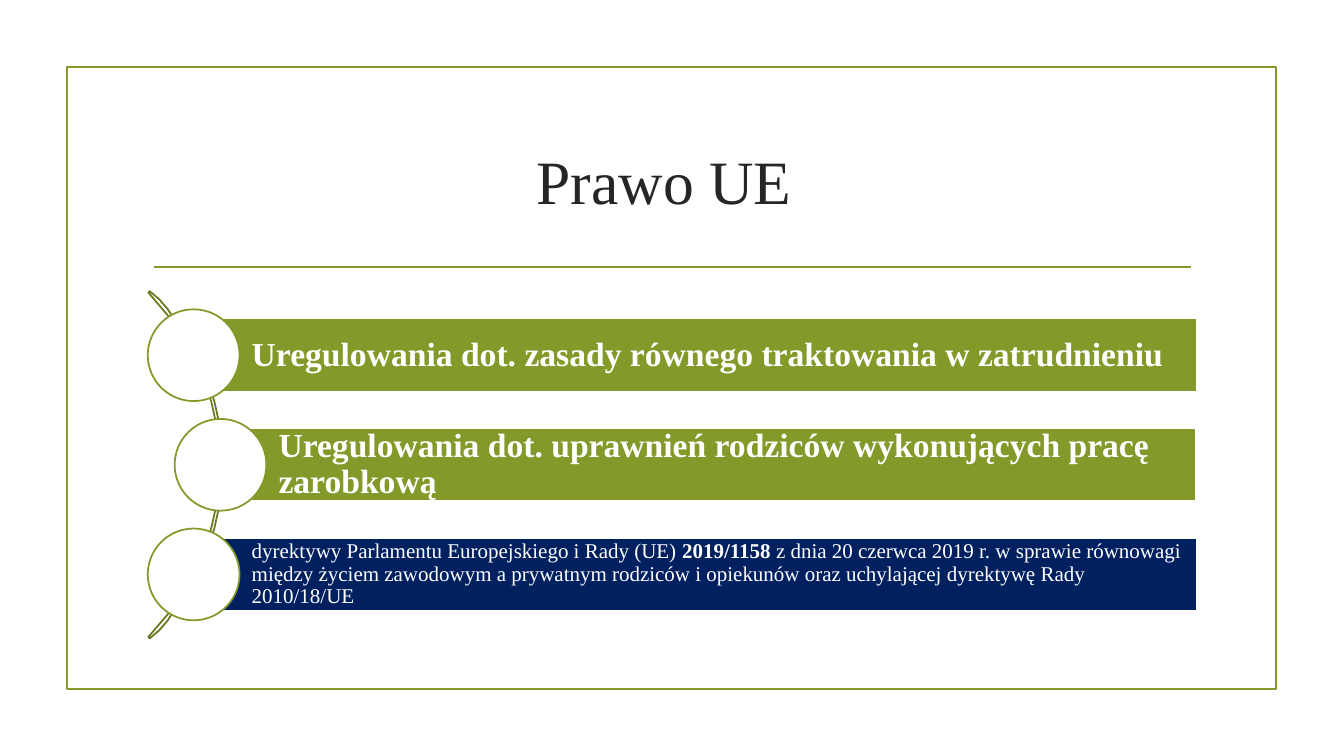
import math

import pptx
import pptx.dml.color
import pptx.enum.shapes
import pptx.enum.text
import pptx.oxml.ns
import pptx.util
from lxml import etree

Pt = pptx.util.Pt
RGBColor = pptx.dml.color.RGBColor
SHAPES = pptx.enum.shapes.MSO_SHAPE
ALIGN = pptx.enum.text.PP_ALIGN

WHITE = RGBColor(0xFF, 0xFF, 0xFF)
GREEN = RGBColor(0x83, 0x99, 0x2A)
DARK_GREEN = RGBColor(0x67, 0x79, 0x1F)
NAVY = RGBColor(0x00, 0x20, 0x60)
DARK_GRAY = RGBColor(0x26, 0x26, 0x26)
FONT = "Times New Roman"
LINE_WIDTH = 1.25

# Geometry of the list, in points
MIDDLE_Y = 332
ROW_PITCH = 78.3
BAR_HEIGHT = 52.2
BAR_RIGHT = 854.6
CIRCLE_SIZE = 65.5
ARC_CENTER_X = -17
ARC_RADII = (176, 173.8)

# Each row: bar left, fill, font size, space after, inset, runs of (text, bold)
ROWS = [
    (138.3, GREEN, 24, 10, 5,
     [("Uregulowania dot. zasady równego traktowania w zatrudnieniu", True)]),
    (157.5, GREEN, 24, 10, 5,
     [("Uregulowania dot. uprawnień rodziców wykonujących pracę zarobkową", True)]),
    (138.3, NAVY, 15, 6, 3,
     [("dyrektywy Parlamentu Europejskiego i Rady (UE) ", False),
      ("2019/1158 ", True),
      ("z dnia 20 czerwca 2019 r. w sprawie równowagi między życiem zawodowym "
       "a prywatnym rodziców i opiekunów oraz uchylającej dyrektywę Rady 2010/18/UE",
       False)]),
]


def style_shape(shape, fill, line):
    shape.shadow.inherit = False
    if fill is None:
        shape.fill.background()
    else:
        shape.fill.solid()
        shape.fill.fore_color.rgb = fill
    shape.line.color.rgb = line
    shape.line.width = Pt(LINE_WIDTH)


def add_box(slide, kind, left, top, width, height, fill, line):
    shape = slide.shapes.add_shape(kind, Pt(left), Pt(top), Pt(width), Pt(height))
    style_shape(shape, fill, line)
    return shape


def write_text(shape, runs, size, color, align=ALIGN.LEFT, line_spacing=None,
               space_after=0, insets=(7.2, 3.6, 7.2, 3.6)):
    frame = shape.text_frame
    frame.word_wrap = True
    frame.vertical_anchor = pptx.enum.text.MSO_ANCHOR.MIDDLE
    (frame.margin_left, frame.margin_top,
     frame.margin_right, frame.margin_bottom) = map(Pt, insets)
    paragraph = frame.paragraphs[0]
    paragraph.alignment = align
    paragraph.line_spacing = line_spacing
    paragraph.space_after = Pt(space_after)
    for text, bold in runs:
        run = paragraph.add_run()
        run.text = text
        run.font.name = FONT
        run.font.size = Pt(size)
        run.font.bold = bold
        run.font.color.rgb = color


def add_rule(slide, left, right, y):
    connector = slide.shapes.add_connector(
        pptx.enum.shapes.MSO_CONNECTOR.STRAIGHT, Pt(left), Pt(y), Pt(right), Pt(y))
    connector.line.color.rgb = GREEN
    connector.line.width = Pt(LINE_WIDTH)
    properties = connector._element.spPr
    etree.SubElement(properties, pptx.oxml.ns.qn("a:effectLst"))


def add_arc(slide):
    """Thin quarter ring, from -45 to 45 degrees."""
    outer, inner = [
        [(ARC_CENTER_X + radius * math.cos(math.radians(angle)),
          MIDDLE_Y + radius * math.sin(math.radians(angle)))
         for angle in range(-45, 46, 3)]
        for radius in ARC_RADII]
    points = outer + inner[::-1]
    builder = slide.shapes.build_freeform(*points[0], scale=Pt(1))
    builder.add_line_segments(points[1:], close=True)
    style_shape(builder.convert_to_shape(), None, DARK_GREEN)


def add_row(slide, center_y, left, fill, size, space_after, inset, runs):
    bar = add_box(slide, SHAPES.RECTANGLE, left, center_y - BAR_HEIGHT / 2,
                  BAR_RIGHT - left, BAR_HEIGHT, fill, WHITE)
    write_text(bar, runs, size, WHITE, line_spacing=0.9, space_after=space_after,
               insets=(41.5, inset, inset, inset))
    add_box(slide, SHAPES.OVAL, left - CIRCLE_SIZE / 2, center_y - CIRCLE_SIZE / 2,
            CIRCLE_SIZE, CIRCLE_SIZE, WHITE, GREEN)


def main():
    presentation = pptx.Presentation()
    presentation.slide_width = Pt(960)
    presentation.slide_height = Pt(540)
    slide = presentation.slides.add_slide(presentation.slide_layouts[6])

    # Frame and rule
    add_box(slide, SHAPES.RECTANGLE, 47.7, 48, 864, 444, None, GREEN)
    add_rule(slide, 110, 850.5, 190.8)

    # Title
    title = slide.shapes.add_textbox(Pt(102), Pt(77), Pt(756), Pt(103))
    write_text(title, [("Prawo UE ", False)], 44, DARK_GRAY, align=ALIGN.CENTER)

    # Curved list
    add_arc(slide)
    for index, row in enumerate(ROWS):
        add_row(slide, MIDDLE_Y + (index - 1) * ROW_PITCH, *row)

    presentation.save("out.pptx")


if __name__ == "__main__":
    main()
